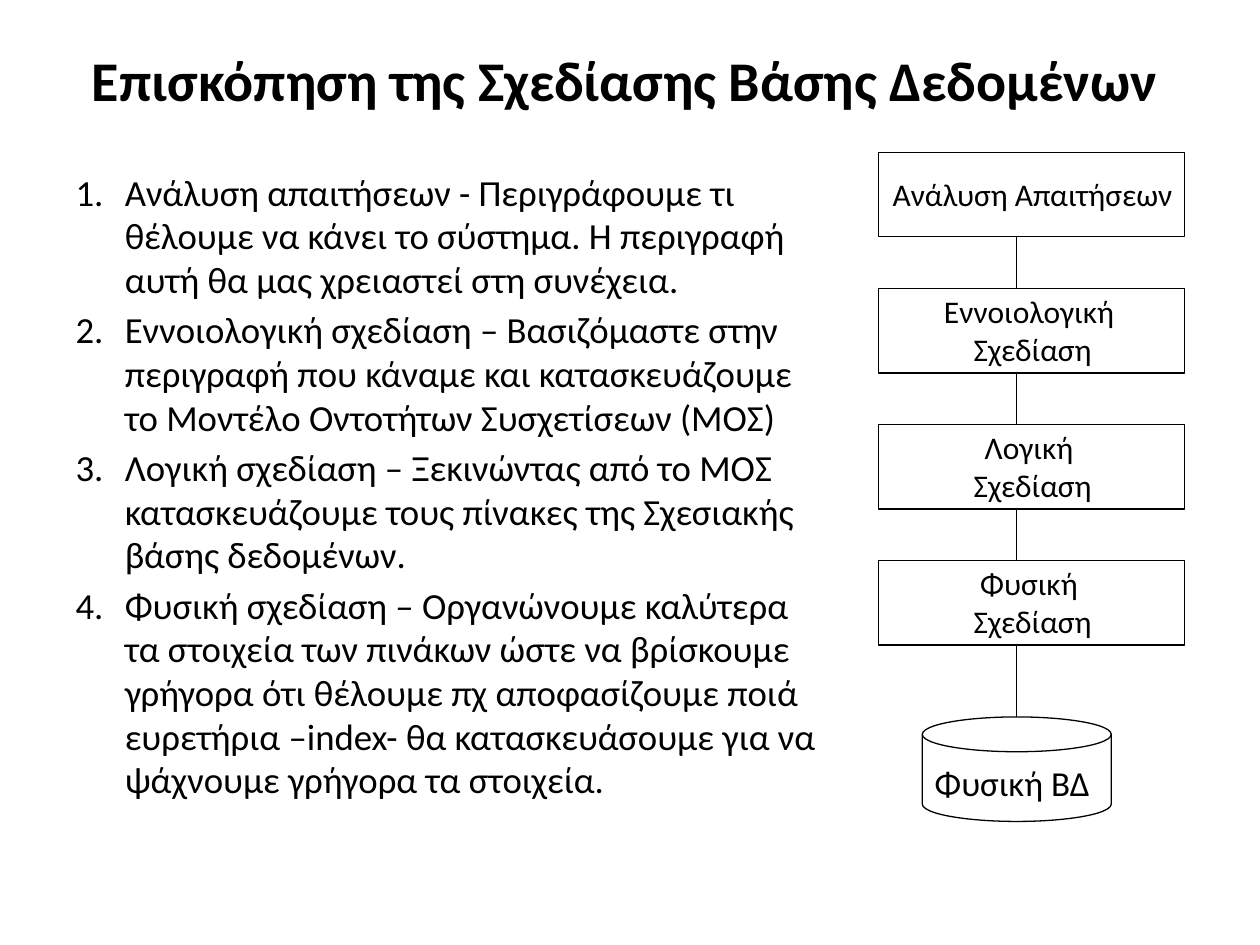
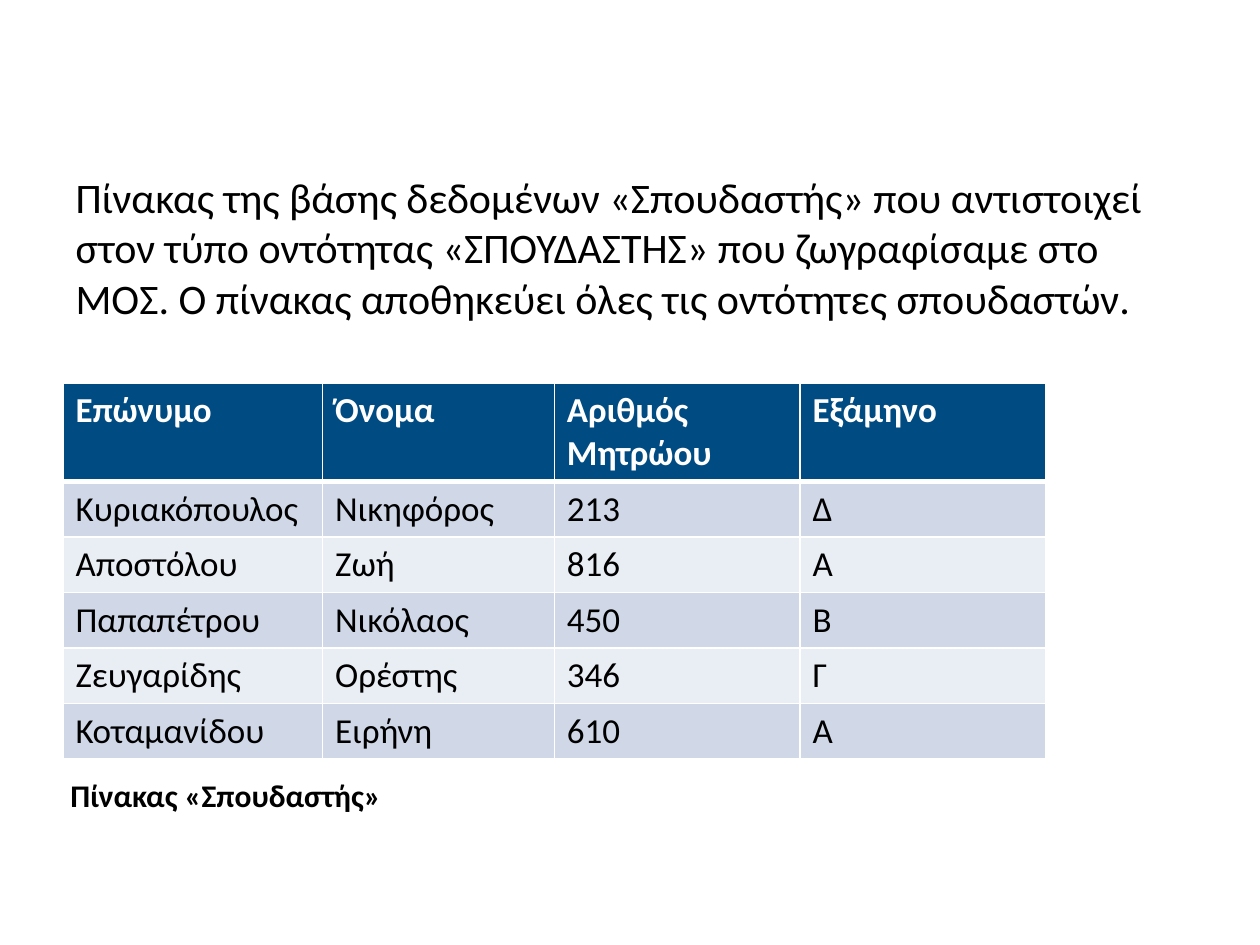
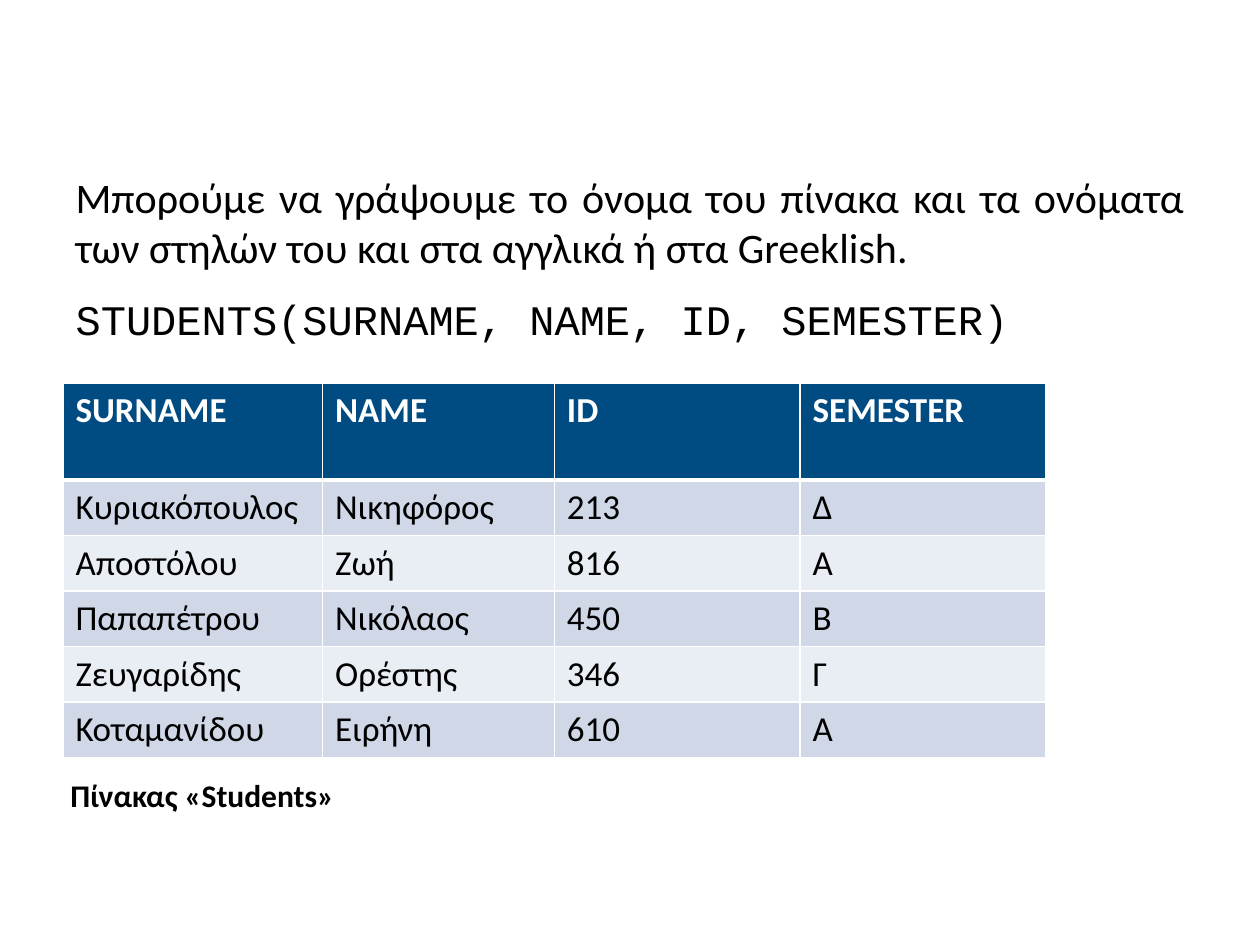
from lxml.etree import SubElement
from pptx import Presentation
from pptx.dml.color import RGBColor
from pptx.enum.shapes import MSO_CONNECTOR, MSO_SHAPE
from pptx.enum.text import MSO_ANCHOR, MSO_AUTO_SIZE, PP_ALIGN
from pptx.oxml.ns import qn
from pptx.util import Inches, Pt

BLACK, WHITE, HEADER_BLUE = "000000", "FFFFFF", "004B82"
BANDS = ("D0D8E8", "E9EDF4")
TEXT_FONT, CODE_FONT = "Calibri", "Courier New"
COLUMN_WIDTHS = (2.06, 1.84, 1.95, 1.95)
HEADER_HEIGHT, ROW_HEIGHT = 0.77, 0.44

STAGES = (
    ("Ανάλυση Απαιτήσεων",),
    ("Εννοιολογική ", "Σχεδίαση"),
    ("Λογική ", "Σχεδίαση"),
    ("Φυσική ", "Σχεδίαση"),
)
STEPS = (
    "Ανάλυση απαιτήσεων - Περιγράφουμε τι θέλουμε να κάνει το σύστημα. "
    "Η περιγραφή αυτή θα μας χρειαστεί στη συνέχεια.",
    "Εννοιολογική σχεδίαση – Βασιζόμαστε στην περιγραφή που κάναμε και "
    "κατασκευάζουμε το Μοντέλο Οντοτήτων Συσχετίσεων (ΜΟΣ)",
    "Λογική σχεδίαση – Ξεκινώντας από το ΜΟΣ κατασκευάζουμε τους πίνακες "
    "της Σχεσιακής βάσης δεδομένων.",
    "Φυσική σχεδίαση – Οργανώνουμε καλύτερα τα στοιχεία των πινάκων ώστε να "
    "βρίσκουμε γρήγορα ότι θέλουμε πχ αποφασίζουμε ποιά ευρετήρια –index- "
    "θα κατασκευάσουμε για να ψάχνουμε γρήγορα τα στοιχεία.",
)
STUDENTS = (
    ("Κυριακόπουλος", "Νικηφόρος", "213", "Δ"),
    ("Αποστόλου", "Ζωή", "816", "Α"),
    ("Παπαπέτρου", "Νικόλαος", "450", "Β"),
    ("Ζευγαρίδης", "Ορέστης", "346", "Γ"),
    ("Κοταμανίδου", "Ειρήνη", "610", "Α"),
)


def rgb(color):
    return RGBColor.from_string(color)


def place(shape, left, top, width, height):
    shape.left, shape.top = Inches(left), Inches(top)
    shape.width, shape.height = Inches(width), Inches(height)


def set_bullet(paragraph, indent, numbered):
    properties = paragraph._p.get_or_add_pPr()
    properties.set("marL", str(Inches(indent)))
    properties.set("indent", str(-Inches(indent)))
    if numbered:
        SubElement(properties, qn("a:buFont"), typeface="+mj-lt")
        SubElement(properties, qn("a:buAutoNum"), type="arabicPeriod")
    else:
        SubElement(properties, qn("a:buNone"))


def set_borders(cell, top, bottom):
    """Draw white cell borders; top and bottom are widths in points."""
    properties = cell._tc.get_or_add_tcPr()
    for side, width in (("L", 1), ("R", 1), ("T", top), ("B", bottom)):
        line = SubElement(properties, qn(f"a:ln{side}"), w=str(Pt(width)))
        fill = SubElement(line, qn("a:solidFill"))
        SubElement(fill, qn("a:srgbClr"), val=WHITE)


class Deck:
    def __init__(self):
        self.presentation = Presentation()
        self.presentation.slide_width = Inches(10)
        self.presentation.slide_height = Inches(7.5)
        self.slide = None

    def new_slide(self, title=None):
        self.slide = self.presentation.slides.add_slide(self.presentation.slide_layouts[1])
        shape = self.slide.shapes.title
        if title is None:
            shape._element.getparent().remove(shape._element)
            return
        place(shape, 0.51, 0.13, 9, 0.99)
        frame = shape.text_frame
        frame.auto_size = MSO_AUTO_SIZE.NONE
        frame.vertical_anchor = MSO_ANCHOR.MIDDLE
        frame.paragraphs[0].alignment = PP_ALIGN.CENTER
        self.run(frame.paragraphs[0], title, 32, bold=True)

    def run(self, paragraph, text, size, color=BLACK, bold=False, font=TEXT_FONT):
        run = paragraph.add_run()
        run.text = text
        run.font.name, run.font.size, run.font.bold = font, Pt(size), bold
        run.font.color.rgb = rgb(color)

    def paragraphs(self, frame, count):
        yield frame.paragraphs[0]
        for _ in range(count - 1):
            yield frame.add_paragraph()

    def body(self, width, height):
        shape = self.slide.placeholders[1]
        place(shape, 0.5, 1.31, width, height)
        shape.text_frame.auto_size = MSO_AUTO_SIZE.NONE
        return shape.text_frame

    def numbered_list(self, items):
        frame = self.body(6.13, 5.51)
        for paragraph, item in zip(self.paragraphs(frame, len(items)), items):
            paragraph.space_before = Pt(3.8)
            paragraph.line_spacing = 0.99
            set_bullet(paragraph, 0.39, numbered=True)
            self.run(paragraph, item, 21)

    def body_text(self, height, *items):
        """Fill the body with (text, alignment, font) paragraphs."""
        frame = self.body(9, height)
        for paragraph, item in zip(self.paragraphs(frame, len(items)), items):
            text, alignment, font = item
            paragraph.alignment = alignment
            paragraph.space_before = Pt(12)
            set_bullet(paragraph, 0, numbered=False)
            self.run(paragraph, text, 24, font=font)

    def outline(self, kind, left, top, width, height):
        shape = self.slide.shapes.add_shape(
            kind, Inches(left), Inches(top), Inches(width), Inches(height))
        shape.shadow.inherit = False
        shape.fill.background()
        shape.line.color.rgb = rgb(BLACK)
        shape.line.width = Pt(0.75)

    def label(self, lines, left, top, width, height, size=18, bold=False,
              alignment=PP_ALIGN.LEFT, wrap=True):
        shape = self.slide.shapes.add_textbox(
            Inches(left), Inches(top), Inches(width), Inches(height))
        frame = shape.text_frame
        frame.word_wrap = wrap
        frame.vertical_anchor = MSO_ANCHOR.MIDDLE
        for paragraph, line in zip(self.paragraphs(frame, len(lines)), lines):
            paragraph.alignment = alignment
            self.run(paragraph, line, size, bold=bold)

    def vertical_line(self, x, top, bottom):
        line = self.slide.shapes.add_connector(
            MSO_CONNECTOR.STRAIGHT, Inches(x), Inches(top), Inches(x), Inches(bottom))
        line.line.color.rgb = rgb(BLACK)
        line.line.width = Pt(0.75)
        SubElement(line._element.spPr, qn("a:effectLst"))

    def student_table(self, headings, caption):
        rows = (headings, *STUDENTS)
        height = HEADER_HEIGHT + ROW_HEIGHT * len(STUDENTS)
        table = self.slide.shapes.add_table(
            len(rows), len(headings), Inches(0.5), Inches(3.04),
            Inches(sum(COLUMN_WIDTHS)), Inches(height)).table
        for column, width in zip(table.columns, COLUMN_WIDTHS):
            column.width = Inches(width)
        for row_index, values in enumerate(rows):
            header = row_index == 0
            table.rows[row_index].height = Inches(HEADER_HEIGHT if header else ROW_HEIGHT)
            for column_index, value in enumerate(values):
                cell = table.cell(row_index, column_index)
                set_borders(cell, top=3 if row_index == 1 else 1, bottom=3 if header else 1)
                cell.fill.solid()
                cell.fill.fore_color.rgb = rgb(HEADER_BLUE if header else BANDS[(row_index - 1) % 2])
                self.run(cell.text_frame.paragraphs[0], value, 20,
                         color=WHITE if header else BLACK, bold=header)
        self.label([caption], 0.46, 6.11, 2.7, 0.4, bold=True, wrap=False)

    def design_flow(self):
        box_left, box_width, box_height, step, line_x = 6.97, 2.43, 0.67, 1.08, 8.07
        disk_top = 5.69
        tops = [1.21 + step * index for index in range(len(STAGES))]
        for top, next_top, lines in zip(tops, tops[1:] + [disk_top], STAGES):
            self.outline(MSO_SHAPE.FLOWCHART_PROCESS, box_left, top, box_width, box_height)
            self.label(lines, box_left - 0.15, top - 0.02, 2.75, 0.7,
                       alignment=PP_ALIGN.CENTER)
            self.vertical_line(line_x, top + box_height, next_top)
        self.outline(MSO_SHAPE.FLOWCHART_MAGNETIC_DISK, 7.32, disk_top, 1.5, 0.83)
        self.label(["Φυσική ΒΔ"], 7.32, disk_top + 0.3, 1.44, 0.44, size=20, wrap=False)


def main():
    deck = Deck()

    deck.new_slide("Επισκόπηση της Σχεδίασης Βάσης Δεδομένων ")
    deck.numbered_list(STEPS)
    deck.design_flow()

    deck.new_slide()
    deck.body_text(1.35, (
        "Πίνακας της βάσης δεδομένων «Σπουδαστής» που αντιστοιχεί στον τύπο "
        "οντότητας «ΣΠΟΥΔΑΣΤΗΣ» που ζωγραφίσαμε στο ΜΟΣ. Ο πίνακας αποθηκεύει "
        "όλες τις οντότητες σπουδαστών.", PP_ALIGN.LEFT, TEXT_FONT))
    deck.student_table(("Επώνυμο", "Όνομα", "Αριθμός Μητρώου", "Εξάμηνο"),
                       "Πίνακας «Σπουδαστής»")

    deck.new_slide()
    deck.body_text(
        5.51,
        ("Μπορούμε να γράψουμε το όνομα του πίνακα και τα ονόματα των στηλών "
         "του και στα αγγλικά ή στα Greeklish.", PP_ALIGN.JUSTIFY, TEXT_FONT),
        ("STUDENTS(SURNAME, NAME, ID, SEMESTER)", PP_ALIGN.LEFT, CODE_FONT))
    deck.student_table(("SURNAME", "NAME", "ID", "SEMESTER"), "Πίνακας «Students»")

    deck.presentation.save("out.pptx")


if __name__ == "__main__":
    main()
